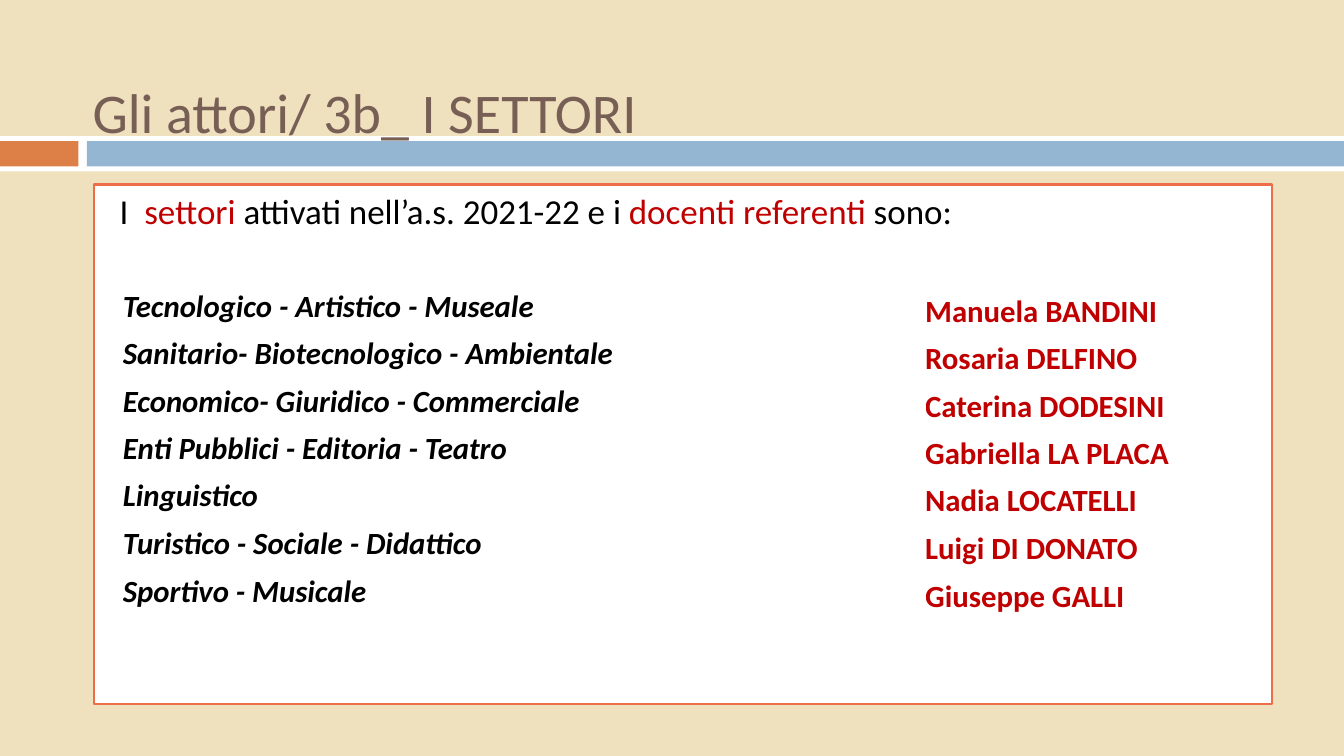
from pptx import Presentation
from pptx.dml.color import RGBColor
from pptx.enum.shapes import MSO_SHAPE as Preset
from pptx.enum.text import MSO_ANCHOR as Anchor, PP_ALIGN as Align
from pptx.util import Pt

COLOURS = {
    "sand": "EFE0BE",
    "white": "FFFFFF",
    "orange": "DD8047",
    "blue": "94B6D2",
    "brown": "775F55",
    "coral": "ED6C49",
    "black": "000000",
    "red": "C00000",
}
SLIDE_WIDTH, SLIDE_HEIGHT = 960, 540
SECTORS = [
    ("Tecnologico - Artistico - Museale", "Manuela BANDINI"),
    ("Sanitario- Biotecnologico - Ambientale", "Rosaria DELFINO"),
    ("Economico- Giuridico - Commerciale", "Caterina DODESINI"),
    ("Enti Pubblici - Editoria - Teatro", "Gabriella LA PLACA"),
    ("Linguistico", "Nadia LOCATELLI"),
    ("Turistico - Sociale - Didattico", "Luigi DI DONATO"),
    ("Sportivo - Musicale", "Giuseppe GALLI"),
]
COLUMN_WIDTHS = [573.1, 228.2]
ROW_HEIGHTS = [33.8] * 5 + [34.6] * 2 + [56.9]


def colour(name):
    """Return the named colour."""
    return RGBColor.from_string(COLOURS[name])


def fill_solid(target, name):
    """Give a shape, cell or background a plain fill."""
    target.fill.solid()
    target.fill.fore_color.rgb = colour(name)


def add_text(paragraph, text, *, size, ink="black", bold=False, italic=False):
    """Append one formatted run to a paragraph."""
    run = paragraph.add_run()
    run.text = text
    font = run.font
    font.name, font.size = "Calibri", Pt(size)
    font.bold, font.italic = bold, italic
    font.color.rgb = colour(ink)


def add_rectangle(slide, left, top, width, height, fill, line=None):
    """Add a flat rectangle with an optional outline."""
    shape = slide.shapes.add_shape(
        Preset.RECTANGLE, Pt(left), Pt(top), Pt(width), Pt(height)
    )
    shape.shadow.inherit = False
    fill_solid(shape, fill)
    if line:
        shape.line.color.rgb = colour(line)
        shape.line.width = Pt(1.5)
    else:
        shape.line.fill.background()
    return shape


def add_title(slide, text):
    """Add the slide title above the band."""
    box = slide.shapes.add_textbox(Pt(59), Pt(51.8), Pt(605.5), Pt(55.4))
    box.text_frame.word_wrap = True
    add_text(box.text_frame.paragraphs[0], text, size=40, ink="brown")


def add_band(slide):
    """Add the two-coloured band on its white strip."""
    add_rectangle(slide, 0, 97.2, SLIDE_WIDTH, 25.2, "white")
    add_rectangle(slide, 0, 100.8, 56, 18, "orange")
    add_rectangle(slide, 62, 100.8, SLIDE_WIDTH - 62, 18, "blue")


def add_panel(slide, pieces):
    """Add the outlined panel with its introductory sentence."""
    panel = add_rectangle(slide, 67, 131.8, 841.7, 370.8, "white", "coral")
    frame = panel.text_frame
    frame.word_wrap = True
    frame.vertical_anchor = Anchor.TOP
    frame.margin_left = Pt(18.5)
    paragraph = frame.paragraphs[0]
    paragraph.alignment = Align.LEFT
    for text, ink in pieces:
        add_text(paragraph, text, size=25, ink=ink)


def add_sector_table(slide):
    """Add the table of sectors and their teachers."""
    table = slide.shapes.add_table(
        len(ROW_HEIGHTS), len(COLUMN_WIDTHS), Pt(87.8), Pt(205.9),
        Pt(sum(COLUMN_WIDTHS)), Pt(sum(ROW_HEIGHTS)),
    ).table
    table.first_row = table.horz_banding = False
    for column, width in zip(table.columns, COLUMN_WIDTHS):
        column.width = Pt(width)
    for row, height in zip(table.rows, ROW_HEIGHTS):
        row.height = Pt(height)
    for cell in table.iter_cells():
        fill_solid(cell, "white")
        cell.margin_left = cell.margin_right = 0
        cell.margin_top = cell.margin_bottom = 0
    for index, (sector, teacher) in enumerate(SECTORS):
        sector_cell, teacher_cell = table.rows[index].cells
        teacher_cell.vertical_anchor = Anchor.MIDDLE
        add_text(sector_cell.text_frame.paragraphs[0], sector,
                 size=22, bold=True, italic=True)
        add_text(teacher_cell.text_frame.paragraphs[0], teacher,
                 size=22, ink="red", bold=True)


def main():
    """Build and save the slide."""
    presentation = Presentation()
    presentation.slide_width = Pt(SLIDE_WIDTH)
    presentation.slide_height = Pt(SLIDE_HEIGHT)
    slide = presentation.slides.add_slide(presentation.slide_layouts[6])
    fill_solid(slide.background, "sand")
    add_band(slide)
    add_title(slide, "Gli attori/ 3b_ I SETTORI")
    add_panel(slide, [
        ("I  ", "black"),
        ("settori ", "red"),
        ("attivati nell’a.s. 2021-22 e i ", "black"),
        ("docenti referenti ", "red"),
        ("sono:", "black"),
    ])
    add_sector_table(slide)
    presentation.save("out.pptx")


if __name__ == "__main__":
    main()
